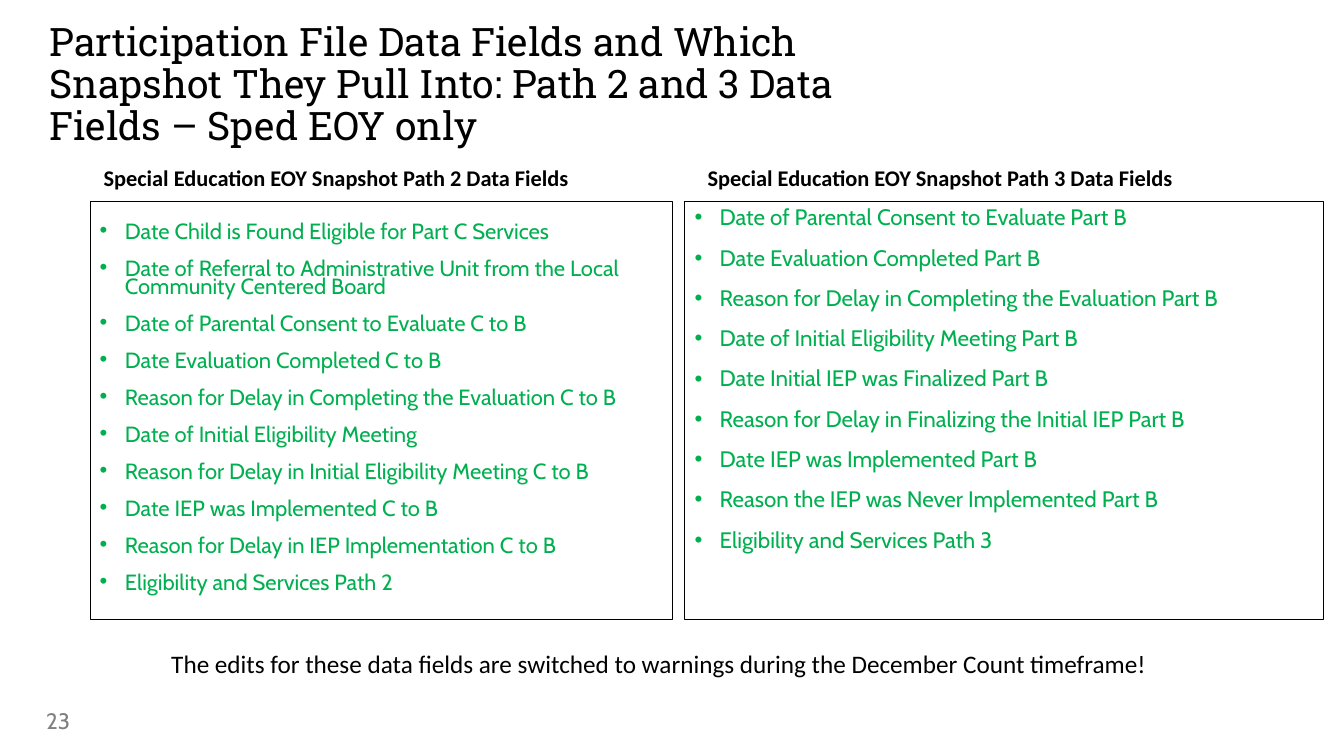
from dataclasses import dataclass

from lxml.etree import SubElement
from pptx import Presentation
from pptx.dml.color import RGBColor
from pptx.enum.shapes import MSO_SHAPE
from pptx.enum.text import MSO_ANCHOR, PP_ALIGN
from pptx.oxml.ns import qn
from pptx.util import Inches, Pt


@dataclass(frozen=True)
class Theme:
    ink: str = "000000"
    green: str = "00B050"
    grey: str = "808080"
    slab: str = "Roboto Slab"
    sans: str = "Calibri"
    body: str = "Cabin"
    title: float = 28
    note: float = 18
    text: float = 16
    dense: float = 15.7
    rule: float = 0.25


THEME = Theme()

PATH_2 = [
    "Date Child is Found Eligible for Part C Services",
    "Date of Referral to Administrative Unit from the Local Community Centered Board",
    "Date of Parental Consent to Evaluate C to B",
    "Date Evaluation Completed C to B",
    "Reason for Delay in Completing the Evaluation C to B",
    "Date of Initial Eligibility Meeting",
    "Reason for Delay in Initial Eligibility Meeting C to B",
    "Date IEP was Implemented C to B",
    "Reason for Delay in IEP Implementation C to B",
    "Eligibility and Services Path 2",
]
PATH_3 = [
    "Date of Parental Consent to Evaluate Part B",
    "Date Evaluation Completed Part B",
    "Reason for Delay in Completing the Evaluation Part B",
    "Date of Initial Eligibility Meeting Part B",
    "Date Initial IEP was Finalized Part B",
    "Reason for Delay in Finalizing the Initial IEP Part B",
    "Date IEP was Implemented Part B",
    "Reason the IEP was Never Implemented Part B",
    "Eligibility and Services Path 3",
]


def add_bullet(para, indent=0.25):
    props = para._p.get_or_add_pPr()
    props.set("marL", str(Inches(indent)))
    props.set("indent", str(-Inches(indent)))
    SubElement(props, qn("a:buFont"), typeface="Arial")
    SubElement(props, qn("a:buChar"), char="•")


def write(shape, lines, size=THEME.text, font=THEME.sans, color=THEME.ink,
          bold=False, pitch=1.0, gap=0, bullet=False, pad=(0.1, 0.05),
          anchor=MSO_ANCHOR.TOP):
    """Fill a shape with one paragraph per line; pad is side and top inset."""
    frame = shape.text_frame
    frame.word_wrap = True
    frame.vertical_anchor = anchor
    frame.margin_left = frame.margin_right = Inches(pad[0])
    frame.margin_top = Inches(pad[1])
    frame.margin_bottom = Inches(min(pad[1], 0.05))
    for i, line in enumerate(lines):
        para = frame.add_paragraph() if i else frame.paragraphs[0]
        para.alignment = PP_ALIGN.LEFT
        para.line_spacing = pitch
        para.space_before = Pt(gap if i else 0)
        if bullet:
            add_bullet(para)
        run = para.add_run()
        run.text = line
        run.font.size = Pt(size)
        run.font.name = font
        run.font.bold = bold
        run.font.color.rgb = RGBColor.from_string(color)


def add_label(slide, box, text, **style):
    shape = slide.shapes.add_textbox(*map(Inches, box))
    write(shape, [text], **style)


def add_panel(slide, box, head, inset, fields, **style):
    """Draw a framed field list with its heading above, moved in by inset."""
    left, top, width, height = box
    add_label(slide, (left + inset, top - 0.42, width - inset, 0.4), head, bold=True)
    frame = slide.shapes.add_shape(MSO_SHAPE.RECTANGLE, *map(Inches, box))
    frame.shadow.inherit = False
    frame.fill.background()
    frame.line.color.rgb = RGBColor.from_string(THEME.ink)
    frame.line.width = Pt(THEME.rule)
    write(frame, fields, font=THEME.body, color=THEME.green, bullet=True, **style)


def main():
    deck = Presentation()
    deck.slide_width, deck.slide_height = Inches(13.33), Inches(7.5)
    slide = deck.slides.add_slide(deck.slide_layouts[6])
    add_label(slide, (0.49, 0.22, 8.82, 0.98),
              "Participation File Data Fields and Which Snapshot They Pull Into: "
              "Path 2 and 3 Data Fields – Sped EOY only",
              size=THEME.title, font=THEME.slab, pitch=0.9, pad=(0, 0))
    add_panel(slide, (0.89, 2, 5.78, 4.14),
              "Special Education EOY Snapshot Path 2 Data Fields", 0.04, PATH_2,
              size=THEME.dense, pitch=0.7, gap=13.2, pad=(0.1, 0.23))
    add_panel(slide, (6.79, 2, 6.33, 4.14),
              "Special Education EOY Snapshot Path 3 Data Fields", 0.13, PATH_3,
              pitch=0.9, gap=11.5)
    add_label(slide, (1.6, 6.38, 11.22, 0.4),
              "The edits for these data fields are switched to warnings "
              "during the December Count timeframe!", size=THEME.note)
    add_label(slide, (0.36, 6.95, 3, 0.4), "23", font=THEME.body,
              color=THEME.grey, anchor=MSO_ANCHOR.MIDDLE)
    deck.save("out.pptx")


if __name__ == "__main__":
    main()
